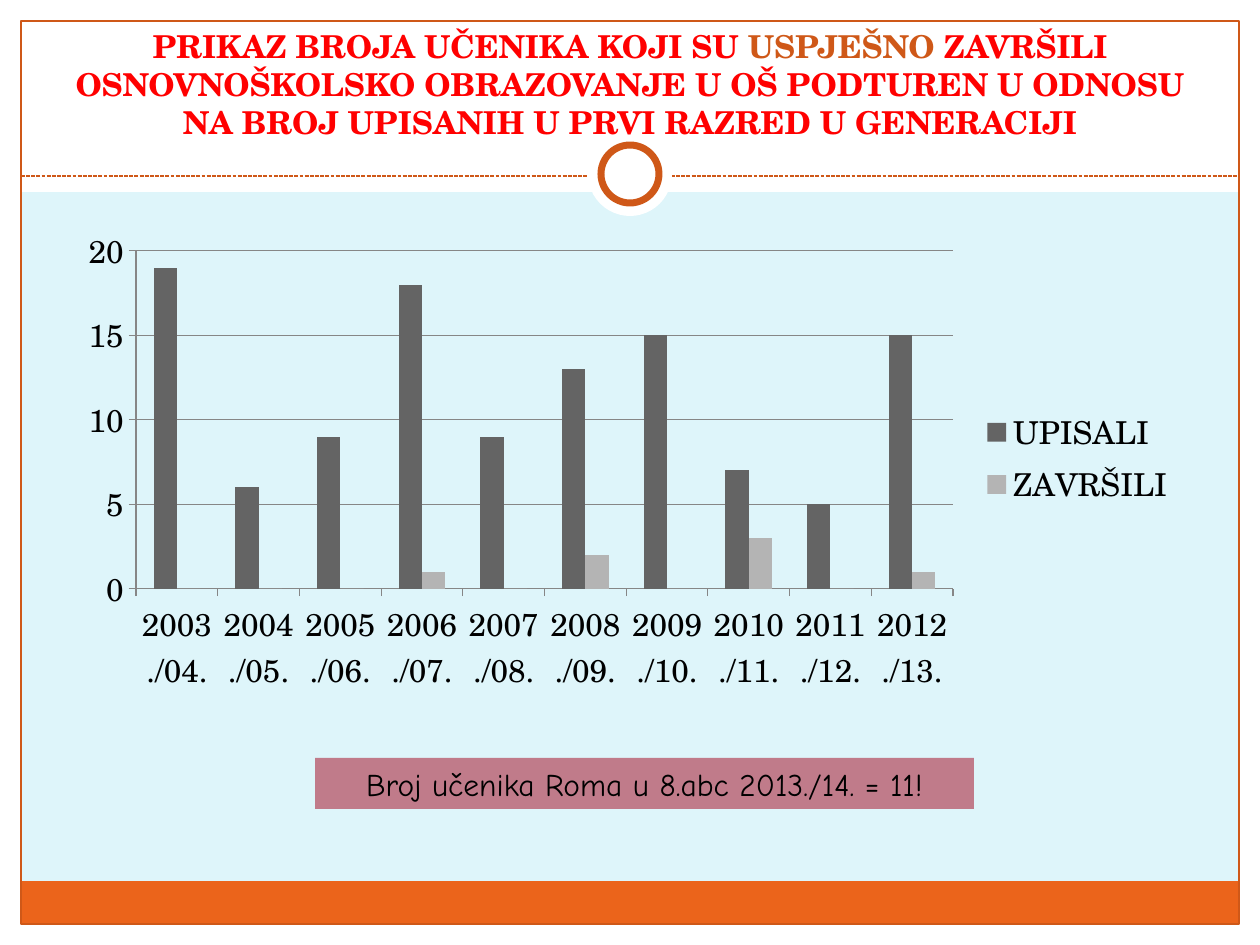
from lxml import etree
from pptx import Presentation
from pptx.chart.data import CategoryChartData
from pptx.dml.color import RGBColor
from pptx.enum.chart import XL_CHART_TYPE, XL_LEGEND_POSITION, XL_TICK_MARK
from pptx.enum.dml import MSO_LINE
from pptx.enum.shapes import MSO_CONNECTOR, MSO_SHAPE
from pptx.enum.text import MSO_ANCHOR, PP_ALIGN
from pptx.oxml.ns import qn
from pptx.util import Emu, Pt

RECTANGLE, OVAL = MSO_SHAPE.RECTANGLE, MSO_SHAPE.OVAL
STRAIGHT, DASH = MSO_CONNECTOR.STRAIGHT, MSO_LINE.SQUARE_DOT
CENTER, BOTTOM, MIDDLE = PP_ALIGN.CENTER, MSO_ANCHOR.BOTTOM, MSO_ANCHOR.MIDDLE
COLUMNS, RIGHT = XL_CHART_TYPE.COLUMN_CLUSTERED, XL_LEGEND_POSITION.RIGHT
TICK_OUT, TICK_NONE = XL_TICK_MARK.OUTSIDE, XL_TICK_MARK.NONE

WIDTH, HEIGHT = 1260, 945
MARGIN = 21
SERIF, CASUAL = "TeX Gyre Schola", "Comic Neue"
WHITE, BLACK, RED = "FFFFFF", "000000", "FF0000"
SKY, ORANGE, RUST, ROSE, GRID = "DEF5FA", "EB641B", "CF5818", "C07B8A", "868686"

ENROLLED = [19, 6, 9, 18, 9, 13, 15, 7, 5, 15]
FINISHED = [0, 0, 0, 1, 0, 2, 0, 3, 0, 1]
SERIES = [("UPISALI", ENROLLED, "646464"), ("ZAVRŠILI", FINISHED, "B4B4B4")]
TITLE = [
    ("PRIKAZ BROJA UČENIKA KOJI SU ", RED),
    ("USPJEŠNO", RUST),
    (" ZAVRŠILI OSNOVNOŠKOLSKO OBRAZOVANJE U OŠ PODTUREN U ODNOSU "
     "NA BROJ UPISANIH U PRVI RAZRED U GENERACIJI", RED),
]


def px(length):
    return Emu(round(length * 914400 / 126))


def color(value):
    return RGBColor.from_string(value)


def style_line(line, value, width=0.75):
    line.color.rgb = color(value)
    line.width = Pt(width)


def add_block(slide, kind, box, fill=None, line=None, width=0.75):
    shape = slide.shapes.add_shape(kind, *map(px, box))
    shape.shadow.inherit = False
    if fill:
        shape.fill.solid()
        shape.fill.fore_color.rgb = color(fill)
    else:
        shape.fill.background()
    if line:
        style_line(shape.line, line, width)
    else:
        shape.line.fill.background()
    return shape


def add_circle(slide, center_x, center_y, diameter, **style):
    left, top = center_x - diameter / 2, center_y - diameter / 2
    return add_block(slide, OVAL, (left, top, diameter, diameter), **style)


def add_rule(slide, left, right, y):
    rule = slide.shapes.add_connector(STRAIGHT, px(left), px(y), px(right), px(y))
    style_line(rule.line, RUST)
    rule.line.dash_style = DASH
    etree.SubElement(rule._element.spPr, qn("a:effectLst"))


def write_text(shape, runs, font, anchor, bold=False):
    frame = shape.text_frame
    frame.word_wrap = True
    frame.vertical_anchor = anchor
    frame.margin_left = frame.margin_right = 0
    paragraph = frame.paragraphs[0]
    paragraph.alignment = CENTER
    for text, value in runs:
        run = paragraph.add_run()
        run.text = text
        run.font.name, run.font.size, run.font.bold = font, Pt(18), bold
        run.font.color.rgb = color(value)


def place_plot(chart, **fractions):
    """Fix the inner plot area as fractions of the chart."""
    plot_area = chart._chartSpace.chart.plotArea
    layout = plot_area.find(qn("c:layout"))
    if layout is None:
        layout = etree.Element(qn("c:layout"))
        plot_area.insert(0, layout)
    manual = etree.SubElement(layout, qn("c:manualLayout"))
    settings = {"layoutTarget": "inner", "xMode": "edge", "yMode": "edge", **fractions}
    for name, value in settings.items():
        etree.SubElement(manual, qn(f"c:{name}")).set("val", str(value))


def add_column_chart(slide, box):
    data = CategoryChartData()
    data.categories = [f"{year}./{year % 100 + 1:02}." for year in range(2003, 2013)]
    for name, values, _ in SERIES:
        data.add_series(name, values)
    chart = slide.shapes.add_chart(COLUMNS, *map(px, box), data).chart
    chart.has_title = False
    chart.font.name, chart.font.size = SERIF, Pt(18)
    chart.font.color.rgb = color(BLACK)

    # Columns
    plot = chart.plots[0]
    plot.gap_width, plot.overlap = 150, 0
    plot.vary_by_categories = False
    for series, (_, _, fill) in zip(plot.series, SERIES):
        series.format.fill.solid()
        series.format.fill.fore_color.rgb = color(fill)

    # Axes and gridlines
    for axis in (chart.category_axis, chart.value_axis):
        axis.major_tick_mark, axis.minor_tick_mark = TICK_OUT, TICK_NONE
        style_line(axis.format.line, GRID)
    value_axis = chart.value_axis
    value_axis.minimum_scale, value_axis.maximum_scale = 0, 20
    value_axis.major_unit = 5
    value_axis.has_major_gridlines = True
    style_line(value_axis.major_gridlines.format.line, GRID)

    # Legend
    chart.has_legend = True
    chart.legend.position = RIGHT
    chart.legend.include_in_layout = False
    place_plot(chart, x=0.06, y=0.07, w=0.73, h=0.7)


def add_frame(slide):
    inner_width = WIDTH - 2 * MARGIN
    # White margins and header
    for box in ((0, HEIGHT - MARGIN, WIDTH, MARGIN), (0, 0, WIDTH, 192),
                (0, 0, MARGIN, HEIGHT), (WIDTH - MARGIN, 0, MARGIN, HEIGHT)):
        add_block(slide, RECTANGLE, box, fill=WHITE)
    # Footer band, border and header rule
    add_block(slide, RECTANGLE, (MARGIN, 881, inner_width, 43), fill=ORANGE)
    add_block(slide, RECTANGLE, (MARGIN, MARGIN, inner_width, HEIGHT - 2 * MARGIN), line=RUST)
    add_rule(slide, MARGIN, WIDTH - MARGIN, 176)
    # Ring on the rule
    add_circle(slide, WIDTH / 2, 174, 84, fill=WHITE)
    add_circle(slide, WIDTH / 2, 174, 58, fill=WHITE, line=RUST, width=4)


def main():
    presentation = Presentation()
    presentation.slide_width, presentation.slide_height = px(WIDTH), px(HEIGHT)
    slide = presentation.slides.add_slide(presentation.slide_layouts[6])
    slide.background.fill.solid()
    slide.background.fill.fore_color.rgb = color(SKY)

    add_frame(slide)
    title = slide.shapes.add_textbox(*map(px, (63, 38, 1134, 109)))
    write_text(title, TITLE, SERIF, BOTTOM, bold=True)
    add_column_chart(slide, (69, 217, 1119, 483))

    # Note below the chart
    note = add_block(slide, RECTANGLE, (315, 758, 659, 51), fill=ROSE)
    write_text(note, [("Broj učenika Roma u 8.abc 2013./14. = 11!", BLACK)], CASUAL, MIDDLE)
    presentation.save("out.pptx")


if __name__ == "__main__":
    main()
